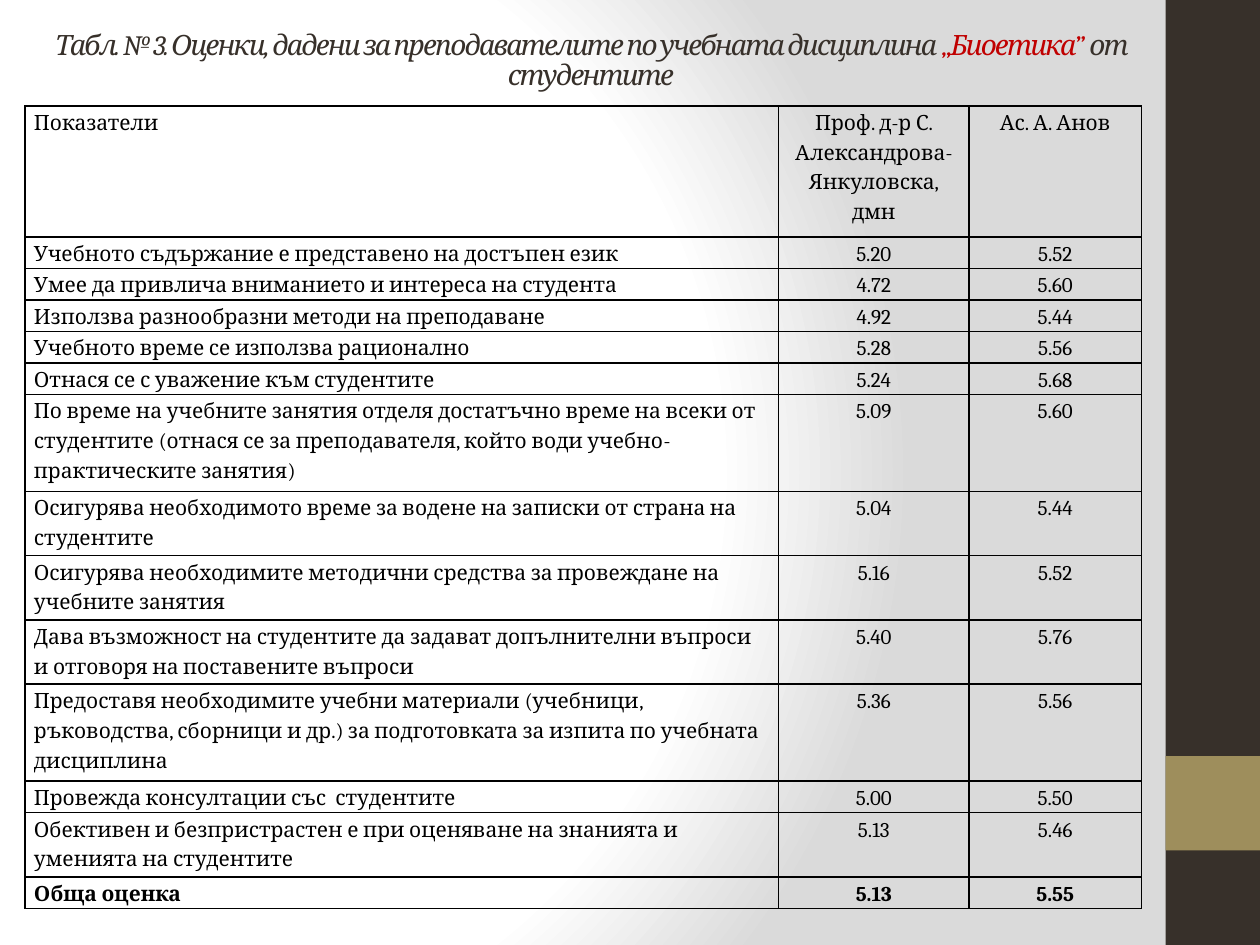
from lxml import etree
from pptx import Presentation
from pptx.dml.color import RGBColor
from pptx.enum.shapes import MSO_SHAPE
from pptx.enum.text import MSO_ANCHOR, PP_ALIGN
from pptx.oxml import parse_xml
from pptx.oxml.ns import nsdecls, qn
from pptx.util import Inches, Pt

CENTER, LEFT, JUSTIFY = PP_ALIGN.CENTER, PP_ALIGN.LEFT, PP_ALIGN.JUSTIFY
MIDDLE = MSO_ANCHOR.MIDDLE
RECTANGLE = MSO_SHAPE.RECTANGLE
TITLE_ONLY = 5

DARK, SAND, RED, BLACK = "37302A", "9E8E5C", "C00000", "000000"

TITLE = [
    ("Табл. № 3. Оценки, дадени за преподавателите по учебната дисциплина ", DARK),
    ("„Биоетика” ", RED),
    ("от студентите", DARK),
]

# Each row: indicator, two scores, number of text lines
HEADER = ("Показатели", "Проф. д-р С. Александрова-Янкуловска, дмн", "Ас. А. Анов", 4)
RATINGS = [
    ("Учебното съдържание е представено на достъпен език", "5.20", "5.52", 1),
    ("Умее да привлича вниманието и интереса на студента", "4.72", "5.60", 1),
    ("Използва разнообразни методи на преподаване", "4.92", "5.44", 1),
    ("Учебното време се използва рационално", "5.28", "5.56", 1),
    ("Отнася се с уважение към студентите", "5.24", "5.68", 1),
    ("По време на учебните занятия отделя достатъчно време на всеки от студентите "
     "(отнася се за преподавателя, който води учебно-практическите занятия)",
     "5.09", "5.60", 3),
    ("Осигурява необходимото време за водене на записки от страна на студентите",
     "5.04", "5.44", 2),
    ("Осигурява необходимите методични средства за провеждане на учебните занятия",
     "5.16", "5.52", 2),
    ("Дава възможност на студентите да задават допълнителни въпроси и отговоря на "
     "поставените въпроси", "5.40", "5.76", 2),
    ("Предоставя необходимите учебни материали (учебници, ръководства, сборници и др.) "
     "за подготовката за изпита по учебната дисциплина", "5.36", "5.56", 3),
    ("Провежда консултации със  студентите", "5.00", "5.50", 1),
    ("Обективен и безпристрастен е при оценяване на знанията и уменията на студентите",
     "5.13", "5.46", 2),
]
TOTAL = ("Обща оценка", "5.13", "5.55", 1)
ROW_HEIGHTS = {1: 0.25, 2: 0.51, 3: 0.77, 4: 1.04}
COLUMN_WIDTHS = (5.98, 1.51, 1.37)


def color(value):
    return RGBColor.from_string(value)


class SlideBuilder:
    font = "Cambria"
    title_size = Pt(16)
    table_size = Pt(12)
    line_height = Pt(17)
    cell_margin = Inches(0.07)

    def __init__(self, page):
        self.page = page

    def background(self, stops, focus):
        stop_xml = "".join(
            f'<a:gs pos="{place * 1000}"><a:srgbClr val="{value}"/></a:gs>'
            for place, value in stops)
        edges = " ".join(f'{side}="{share * 1000}"' for side, share in zip("ltrb", focus))
        common = self.page.element.find(qn("p:cSld"))
        common.insert(0, parse_xml(
            f'<p:bg {nsdecls("p", "a")}><p:bgPr><a:gradFill rotWithShape="1">'
            f'<a:gsLst>{stop_xml}</a:gsLst>'
            f'<a:path path="circle"><a:fillToRect {edges}/></a:path>'
            f'</a:gradFill><a:effectLst/></p:bgPr></p:bg>'))

    def block(self, left, top, width, height, fill):
        shape = self.page.shapes.add_shape(
            RECTANGLE, Inches(left), Inches(top), Inches(width), Inches(height))
        shape.shadow.inherit = False
        shape.fill.solid()
        shape.fill.fore_color.rgb = color(fill)
        shape.line.fill.background()

    def style(self, span, size, value):
        span.font.name = self.font
        span.font.size = size
        span.font.color.rgb = color(value)

    def title(self, left, top, width, height, parts):
        box = self.page.shapes.title
        box.left, box.top = Inches(left), Inches(top)
        box.width, box.height = Inches(width), Inches(height)
        frame = box.text_frame
        frame.word_wrap = True
        frame.vertical_anchor = MIDDLE
        para = frame.paragraphs[0]
        para.alignment = CENTER
        para.line_spacing = 0.9
        for text, value in parts:
            span = para.add_run()
            span.text = text
            self.style(span, self.title_size, value)
            span.font.italic = True
            span.font._element.set("spc", "-100")

    def borders(self, cell):
        properties = cell._tc.get_or_add_tcPr()
        for position, side in enumerate(("lnL", "lnR", "lnT", "lnB")):
            line = etree.Element(qn(f"a:{side}"), w=str(Pt(1)))
            fill = etree.SubElement(line, qn("a:solidFill"))
            etree.SubElement(fill, qn("a:srgbClr"), val=BLACK)
            properties.insert(position, line)

    def cell(self, cell, text, alignment, bold):
        cell.fill.background()
        cell.margin_left = cell.margin_right = self.cell_margin
        cell.margin_top = cell.margin_bottom = 0
        cell.text_frame.text = text
        para = cell.text_frame.paragraphs[0]
        para.alignment = alignment
        para.line_spacing = self.line_height
        span = para.runs[0]
        self.style(span, self.table_size, BLACK)
        span.font.bold = bold
        self.borders(cell)

    def table(self, left, top, widths, rows):
        heights = [ROW_HEIGHTS[row[-1]] for row in rows]
        table = self.page.shapes.add_table(
            len(rows), len(widths), Inches(left), Inches(top),
            Inches(sum(widths)), Inches(sum(heights))).table
        table.first_row = table.horz_banding = False
        for column, width in zip(table.columns, widths):
            column.width = Inches(width)
        for i, (row, height) in enumerate(zip(rows, heights)):
            table.rows[i].height = Inches(height)
            first = JUSTIFY if i == 0 else LEFT
            for j, text in enumerate(row[:-1]):
                self.cell(table.cell(i, j), text, CENTER if j else first,
                          bold=i == len(rows) - 1)


def main():
    deck = Presentation()
    deck.slide_width, deck.slide_height = Inches(10), Inches(7.5)
    builder = SlideBuilder(deck.slides.add_slide(deck.slide_layouts[TITLE_ONLY]))

    # Backdrop and side band
    builder.background([(0, "FFFFFF"), (75, "FFFFFF"), (100, "DADADA")], (20, 50, 100, 50))
    builder.block(9.25, 0, 0.75, 7.5, DARK)
    builder.block(9.25, 6, 0.75, 0.75, SAND)

    # Heading and ratings
    builder.title(0.2, 0.21, 8.98, 0.55, TITLE)
    builder.table(0.2, 0.84, COLUMN_WIDTHS, [HEADER, *RATINGS, TOTAL])

    deck.save("out.pptx")


if __name__ == "__main__":
    main()
